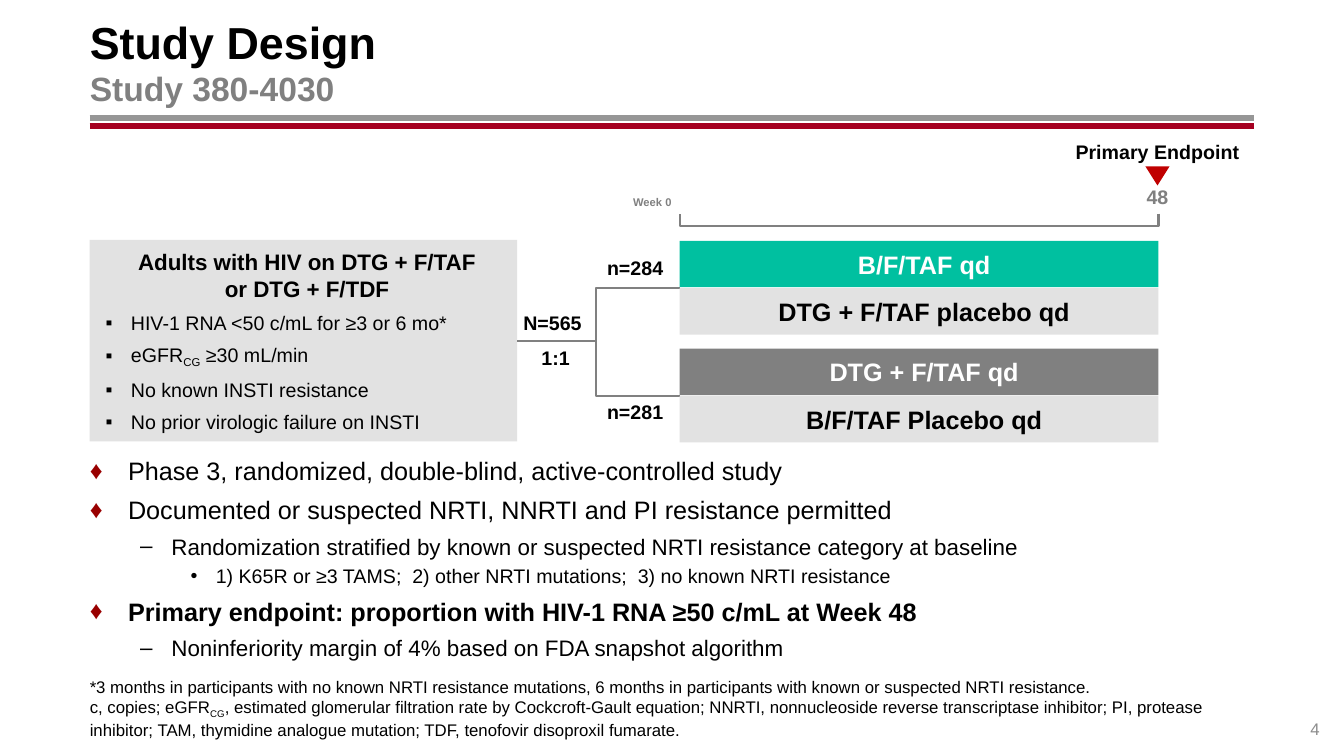
from dataclasses import dataclass
from typing import Optional

from lxml import etree
from pptx import Presentation
from pptx import util as u
from pptx.dml.color import RGBColor
from pptx.enum import shapes, text
from pptx.oxml.ns import qn

BLACK = RGBColor(0, 0, 0)
WHITE = RGBColor(0xFF, 0xFF, 0xFF)
GRAY = RGBColor(0x80, 0x80, 0x80)
PALE_GRAY = RGBColor(0xE2, 0xE2, 0xE2)
RULE_GRAY = RGBColor(0x96, 0x96, 0x96)
NUMBER_GRAY = RGBColor(0x8C, 0x8C, 0x8C)
TEAL = RGBColor(0, 0xC0, 0xA0)
RULE_RED = RGBColor(0xA5, 0, 0x21)
MARKER_RED = RGBColor(0xC0, 0, 0)
BULLET_RED = "990000"
CENTER, RIGHT = text.PP_ALIGN.CENTER, text.PP_ALIGN.RIGHT
TOP, MIDDLE, BOTTOM = (text.MSO_ANCHOR.TOP, text.MSO_ANCHOR.MIDDLE,
                       text.MSO_ANCHOR.BOTTOM)
NO_INSETS = (0, 0, 0, 0)
DEFAULT_INSETS = (0.1, 0.05, 0.1, 0.05)
FLUSH_INSETS = (0, 0.05, 0.1, 0.05)
LEFT, CONTENT_WIDTH = 0.89, 11.55


@dataclass(frozen=True)
class Run:
    text: str
    size: float = 14
    color: RGBColor = BLACK
    bold: bool = False
    subscript: bool = False


@dataclass(frozen=True)
class Bullet:
    char: str
    margin: float
    hanging: float
    level: int = 0
    color: Optional[str] = None


@dataclass(frozen=True)
class Para:
    runs: tuple[Run, ...]
    align: Optional[text.PP_ALIGN] = None
    before: float = 0
    after: float = 0
    bullet: Optional[Bullet] = None


@dataclass(frozen=True)
class Label:
    box: tuple[float, float, float, float]
    run: Run
    align: Optional[text.PP_ALIGN] = CENTER
    anchor: text.MSO_ANCHOR = TOP
    insets: tuple[float, ...] = DEFAULT_INSETS
    wrap: bool = False


@dataclass(frozen=True)
class Arm:
    top: float
    name: str
    fill: RGBColor
    color: RGBColor


DIAMOND = Bullet("♦", 0.38, 0.38, color=BULLET_RED)
DASH = Bullet("–", 0.81, 0.31, level=1)
DOT = Bullet("•", 1.25, 0.25, level=2)
SQUARE = Bullet("▪", 0.31, 0.25)


def set_bullet(paragraph, bullet: Bullet) -> None:
    paragraph.level = bullet.level
    props = paragraph._p.get_or_add_pPr()
    props.set("marL", str(u.Inches(bullet.margin)))
    props.set("indent", str(-u.Inches(bullet.hanging)))
    if bullet.color:
        color = etree.SubElement(props, qn("a:buClr"))
        etree.SubElement(color, qn("a:srgbClr"), val=bullet.color)
    etree.SubElement(props, qn("a:buFont"), typeface="Arial")
    etree.SubElement(props, qn("a:buChar"), char=bullet.char)


def add_run(paragraph, item: Run) -> None:
    for index, line in enumerate(item.text.split("\n")):
        if index:
            paragraph.add_line_break()
        if not line:
            continue
        run = paragraph.add_run()
        run.text = line
        run.font.name, run.font.size = "Arial", u.Pt(item.size)
        run.font.bold, run.font.color.rgb = item.bold, item.color
        if item.subscript:
            run._r.get_or_add_rPr().set("baseline", "-25000")


def write(frame, paras: list[Para], anchor=TOP, insets=DEFAULT_INSETS, wrap: bool = True) -> None:
    frame.auto_size = text.MSO_AUTO_SIZE.NONE
    frame.word_wrap, frame.vertical_anchor = wrap, anchor
    (frame.margin_left, frame.margin_top,
     frame.margin_right, frame.margin_bottom) = map(u.Inches, insets)
    for index, para in enumerate(paras):
        paragraph = frame.add_paragraph() if index else frame.paragraphs[0]
        paragraph.alignment = para.align or text.PP_ALIGN.LEFT
        paragraph.space_before, paragraph.space_after = u.Pt(para.before), u.Pt(para.after)
        if para.bullet:
            set_bullet(paragraph, para.bullet)
        for run in para.runs:
            add_run(paragraph, run)


def add_text(slide, box: tuple, paras: list[Para], **layout) -> None:
    write(slide.shapes.add_textbox(*map(u.Inches, box)).text_frame, paras, **layout)


def add_block(slide, kind, box: tuple, fill: RGBColor):
    block = slide.shapes.add_shape(kind, *map(u.Inches, box))
    block.shadow.inherit = False
    block.fill.solid()
    block.fill.fore_color.rgb = fill
    block.line.fill.background()
    return block


def add_line(slide, start: tuple, end: tuple, color: RGBColor, width: float):
    line = slide.shapes.add_connector(shapes.MSO_CONNECTOR.STRAIGHT,
                                      *map(u.Inches, start + end))
    line.line.color.rgb, line.line.width = color, u.Pt(width)
    etree.SubElement(line._element.spPr, qn("a:effectLst"))
    return line


def add_bracket(slide, points: list[tuple[float, float]]) -> None:
    corners = [(u.Inches(x), u.Inches(y)) for x, y in points]
    builder = slide.shapes.build_freeform(*corners[0])
    builder.add_line_segments(corners[1:], close=False)
    bracket = builder.convert_to_shape()
    bracket.shadow.inherit = False
    bracket.fill.background()
    bracket.line.color.rgb, bracket.line.width = GRAY, u.Pt(1.5)


def main() -> None:
    deck = Presentation()
    deck.slide_width, deck.slide_height = u.Inches(13.33), u.Inches(7.5)
    slide = deck.slides.add_slide(deck.slide_layouts[5])

    # Title and double rule
    title = slide.shapes.title
    title.left, title.top, title.width, title.height = map(
        u.Inches, (LEFT, 0.18, CONTENT_WIDTH, 0.86))
    write(title.text_frame, [Para((Run("Study Design\n", 32, bold=True),
                                   Run("Study 380-4030", 24, GRAY, True)))],
          anchor=MIDDLE, insets=FLUSH_INSETS)
    for y, color in ((1.17, RULE_GRAY), (1.25, RULE_RED)):
        add_line(slide, (LEFT, y), (LEFT + CONTENT_WIDTH, y), color, 4.25)

    # Eligible participants
    criteria = [(Run("HIV-1 RNA <50 c/mL for ≥3 or 6 mo*"),),
                (Run("eGFR"), Run("CG", subscript=True), Run(" ≥30 mL/min")),
                (Run("No known INSTI resistance"),),
                (Run("No prior virologic failure on INSTI"),)]
    heading = Run("Adults with HIV on DTG + F/TAF\nor DTG + F/TDF", 16, bold=True)
    population = add_block(slide, shapes.MSO_SHAPE.RECTANGLE, (LEFT, 2.38, 4.24, 2), PALE_GRAY)
    write(population.text_frame,
          [Para((heading,), CENTER, after=6)]
          + [Para(runs, after=6, bullet=SQUARE) for runs in criteria], anchor=MIDDLE)
    population.text_frame.paragraphs[0]._p.get_or_add_pPr().set("marL", str(u.Inches(0.07)))

    # Randomization branches and week scale
    arm_left, arm_width, fork = 6.74, 4.75, 5.91
    arm_right = arm_left + arm_width
    add_bracket(slide, [(arm_left, 3.93), (fork, 3.93), (fork, 2.86), (arm_left, 2.86)])
    add_bracket(slide, [(arm_right, 2.12), (arm_right, 2.24), (arm_left, 2.24), (arm_left, 2.12)])
    stem = add_line(slide, (LEFT + 4.24, 3.38), (fork, 3.38), GRAY, 1.5)
    stem.begin_connect(population, 3)

    # Treatment arms
    for arm in (Arm(2.39, "B/F/TAF qd", TEAL, WHITE),
                Arm(2.86, "DTG + F/TAF placebo qd", PALE_GRAY, BLACK),
                Arm(3.46, "DTG + F/TAF qd", GRAY, WHITE),
                Arm(3.93, "B/F/TAF Placebo qd", PALE_GRAY, BLACK)):
        bar = add_block(slide, shapes.MSO_SHAPE.RECTANGLE,
                        (arm_left, arm.top, arm_width, 0.46), arm.fill)
        write(bar.text_frame, [Para((Run(arm.name, 18, arm.color, True),), CENTER)],
              anchor=MIDDLE, insets=(0.2, 0.05, 0.1, 0.05))

    # Primary endpoint marker
    marker = add_block(slide, shapes.MSO_SHAPE.ISOSCELES_TRIANGLE,
                       (11.36, 1.65, 0.24, 0.19), MARKER_RED)
    marker.rotation = 180

    # Diagram labels and page number
    for label in (
            Label((5.79, 1.77, 1.36, 0.35), Run("Week 0", 8, GRAY, True), anchor=BOTTOM, wrap=True),
            Label((11.27, 1.78, 0.42, 0.34), Run("48", color=GRAY, bold=True), anchor=BOTTOM),
            Label((10.56, 1.34, 1.84, 0.34), Run("Primary Endpoint", bold=True)),
            Label((5.92, 2.49, 0.76, 0.34), Run("n=284", bold=True)),
            Label((5.92, 3.92, 0.76, 0.34), Run("n=281", bold=True)),
            Label((5.27, 3.38, 0.48, 0.34), Run("1:1", bold=True)),
            Label((5.19, 3.08, 0.63, 0.24), Run("N=565", bold=True), None, insets=NO_INSETS, wrap=True),
            Label((12.44, 6.93, 0.65, 0.4), Run("4", 12, NUMBER_GRAY), RIGHT, BOTTOM, NO_INSETS, True)):
        add_text(slide, label.box, [Para((label.run,), label.align)],
                 anchor=label.anchor, insets=label.insets, wrap=label.wrap)

    # Design points
    points = [
        (DIAMOND, Run("Phase 3, randomized, double-blind, active-controlled study", 18)),
        (DIAMOND, Run("Documented or suspected NRTI, NNRTI and PI resistance permitted", 18)),
        (DASH, Run("Randomization stratified by known or suspected NRTI resistance category at baseline", 16)),
        (DOT, Run("1) K65R or ≥3 TAMS;  2) other NRTI mutations;  3) no known NRTI resistance")),
        (DIAMOND, Run("Primary endpoint: proportion with HIV-1 RNA ≥50 c/mL at Week 48", 18, bold=True)),
        (DASH, Run("Noninferiority margin of 4% based on FDA snapshot algorithm", 16))]
    add_text(slide, (LEFT, 4.47, CONTENT_WIDTH, 2.13),
             [Para((run,), before=3 if bullet is DOT else 6, bullet=bullet)
              for bullet, run in points], insets=FLUSH_INSETS)

    # Footnotes
    add_text(slide, (LEFT, 6.91, CONTENT_WIDTH, 0.43), [
        Para((Run("*3 months in participants with no known NRTI resistance mutations, "
                  "6 months in participants with known or suspected NRTI resistance.", 12),)),
        Para((Run("c, copies; eGFR", 12), Run("CG", 12, subscript=True),
              Run(", estimated glomerular filtration rate by Cockcroft-Gault equation; "
                  "NNRTI, nonnucleoside reverse transcriptase inhibitor; PI, protease inhibitor; "
                  "TAM, thymidine analogue mutation; TDF, tenofovir disoproxil fumarate.", 12)))],
             anchor=BOTTOM, insets=NO_INSETS)

    deck.save("out.pptx")


if __name__ == "__main__":
    main()
